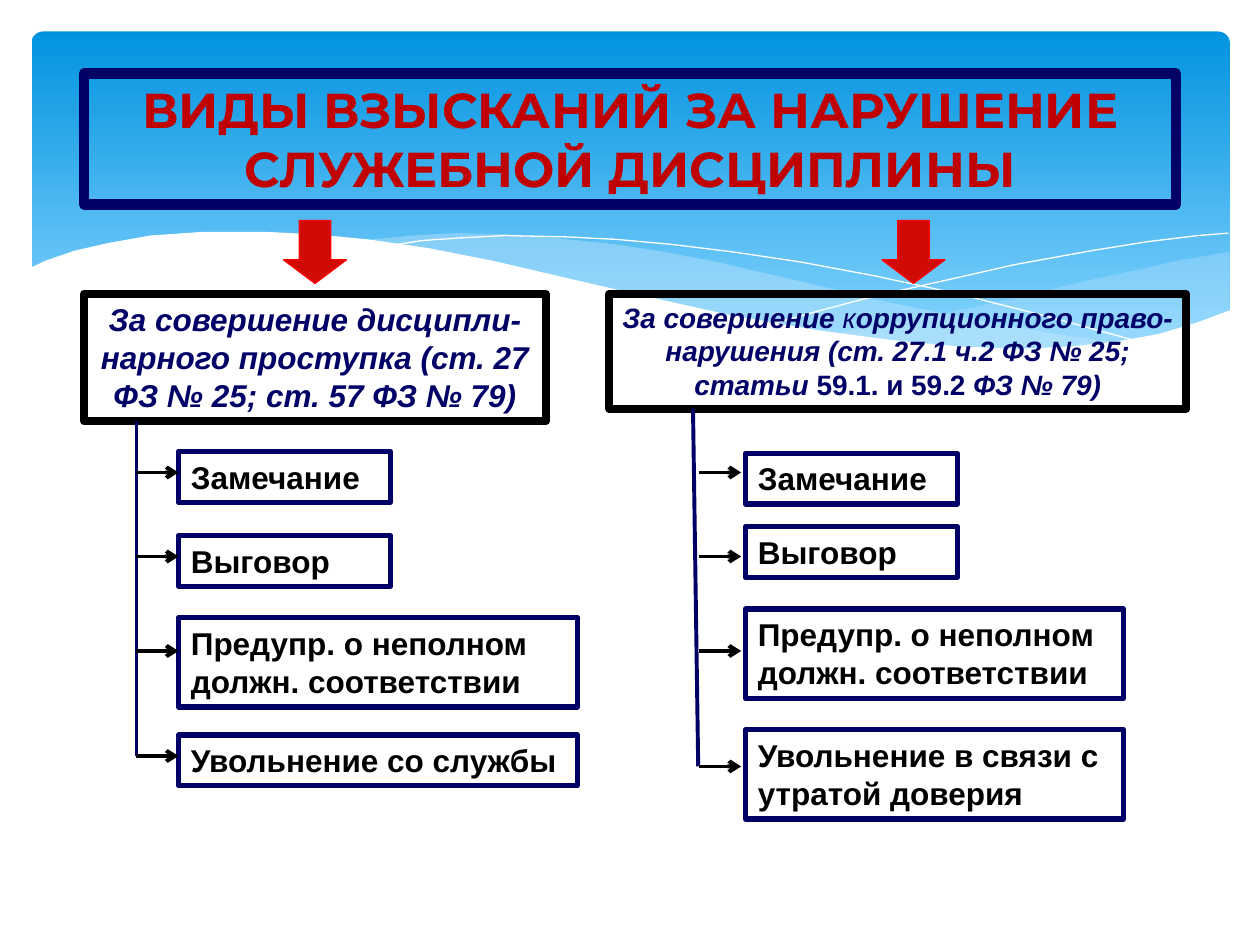
from dataclasses import dataclass

from lxml.etree import SubElement
from pptx import Presentation
from pptx.dml.color import RGBColor
from pptx.enum.shapes import MSO_CONNECTOR, MSO_SHAPE
from pptx.enum.text import MSO_AUTO_SIZE, PP_ALIGN
from pptx.oxml.ns import qn
from pptx.util import Pt


@dataclass(frozen=True)
class Theme:
    """Colours, fonts and type sizes of the slide."""
    navy: str = "000066"
    black: str = "000000"
    white: str = "FFFFFF"
    title: str = "C00000"
    arrow: str = "D00B06"
    arrow_edge: str = "FF0000"
    sky_top: str = "0293E0"
    sky_bottom: str = "83D3FE"
    haze: str = "C6E7FC"
    title_font: str = "Montserrat"
    body_font: str = "Arial"
    title_size: int = 28
    body_size: int = 18
    small_size: int = 16


THEME = Theme()

RIGHT_HAZE = [
    (702, 144), (673, 149), (642, 156), (620, 160.6), (580, 170.6), (542, 178.6),
    (508, 185), (476, 190.8), (508, 194.4), (536, 198), (562, 199.4), (586, 200),
    (615, 198.7), (640, 196), (663, 190.8), (683, 185), (702.7, 177.8), (702.7, 144),
]
MIDDLE_HAZE = [
    (643, 196.6), (603, 190.8), (558, 182.9), (508, 172.8), (453, 159.8), (410, 149.8),
    (380, 144), (352, 139.7), (318, 136.1), (287, 133.9), (260, 133.2), (236, 134.6),
    (206, 137.5), (246, 143.3), (291, 151.9), (323, 159.8), (382, 172.8), (433, 183.6),
    (479, 191.5), (519, 196), (557, 199.4), (589, 200.2), (617, 199.4), (643, 196.6),
]
FALLING_LINE = [
    (222.5, 140.4), (241, 137.5), (261, 136.1), (288.7, 134.6), (324, 135.4), (352, 136.8),
    (384, 139.7), (419, 144), (458, 149.8), (500, 157.7), (547, 167.8), (598, 180.7),
    (653, 195.8),
]
RISING_LINE = [
    (441.4, 185), (470, 177.1), (500, 169.2), (538.6, 160.6), (580, 151.2), (623.5, 143.3),
    (655, 138.2), (684.7, 134.6), (702, 133.2),
]
WHITE_WAVE = [
    (703.4, 177.1), (684, 184.3), (662.4, 190.8), (638.6, 195.1), (612, 198), (582.5, 199.4),
    (547.9, 198), (509.8, 194.4), (466.6, 188.6), (416.9, 180), (362.2, 167.8), (321.8, 158.4),
    (281.5, 149), (244.8, 141.8), (210.2, 136.8), (180, 133.9), (151.9, 132.5), (115.9, 132.5),
    (85.7, 134.6), (61.2, 139), (42.5, 143.3), (25.9, 149), (16.6, 153.4), (16.6, 236.9),
    (703.4, 236.9),
]


def color(value):
    """Turn a hex string into a colour."""
    return RGBColor.from_string(value)


def points(*lengths):
    """Turn lengths in points into slide units."""
    return [Pt(length) for length in lengths]


def write_text(frame, text, font=THEME.body_font, size=THEME.body_size, ink=THEME.black,
               bold=True, italic=False, align=PP_ALIGN.LEFT):
    """Add a run of formatted text to the first paragraph of a frame."""
    paragraph = frame.paragraphs[0]
    paragraph.alignment = align
    run = paragraph.add_run()
    run.text = text
    run.font.name = font
    run.font.size = Pt(size)
    run.font.bold = bold
    run.font.italic = italic
    run.font.color.rgb = color(ink)


def add_frame(slide, box, edge, weight):
    """Add an outlined text box and return its text frame."""
    shape = slide.shapes.add_textbox(*points(*box))
    shape.line.color.rgb = color(edge)
    shape.line.width = Pt(weight)
    frame = shape.text_frame
    frame.word_wrap = True
    frame.auto_size = MSO_AUTO_SIZE.SHAPE_TO_FIT_TEXT
    return frame


def add_line(slide, start, end, ink, arrow=False):
    """Add a straight line, with an arrowhead at its end if asked."""
    connector = slide.shapes.add_connector(MSO_CONNECTOR.STRAIGHT, *points(*start, *end))
    connector.line.color.rgb = color(ink)
    connector.line.width = Pt(2.25)
    properties = connector._element.spPr
    if arrow:
        SubElement(properties.find(qn("a:ln")), qn("a:tailEnd"), type="arrow")
    SubElement(properties, qn("a:effectLst"))


def add_curve(slide, vertices, fill=None, opacity=100):
    """Add a filled wave, or a white hairline when no fill is given."""
    first, *rest = [points(*vertex) for vertex in vertices]
    builder = slide.shapes.build_freeform(*first)
    builder.add_line_segments(rest, close=fill is not None)
    shape = builder.convert_to_shape()
    shape.shadow.inherit = False
    if fill is None:
        shape.fill.background()
        shape.line.color.rgb = color(THEME.white)
        shape.line.width = Pt(0)
        return
    shape.line.fill.background()
    shape.fill.solid()
    shape.fill.fore_color.rgb = color(fill)
    if opacity < 100:
        solid = shape._element.spPr.find(qn("a:solidFill"))
        SubElement(solid[0], qn("a:alpha"), val=str(opacity * 1000))


def add_backdrop(slide, box):
    """Draw the blue panel with its waves."""
    panel = slide.shapes.add_shape(MSO_SHAPE.ROUNDED_RECTANGLE, *points(*box))
    panel.adjustments[0] = 0.034
    panel.shadow.inherit = False
    panel.line.fill.background()
    panel.fill.gradient()
    panel.fill.gradient_angle = 270
    stops = ((0, THEME.sky_top), (0.9, THEME.sky_bottom))
    for stop, (position, value) in zip(panel.fill.gradient_stops, stops):
        stop.position = position
        stop.color.rgb = color(value)
    add_curve(slide, RIGHT_HAZE, THEME.haze, 29)
    add_curve(slide, MIDDLE_HAZE, THEME.haze, 40)
    add_curve(slide, FALLING_LINE)
    add_curve(slide, RISING_LINE)
    add_curve(slide, WHITE_WAVE, THEME.white)


def add_title(slide, box):
    """Place the framed title."""
    write_text(add_frame(slide, box, THEME.navy, 6),
               "ВИДЫ ВЗЫСКАНИЙ ЗА НАРУШЕНИЕ СЛУЖЕБНОЙ ДИСЦИПЛИНЫ",
               font=THEME.title_font, size=THEME.title_size, ink=THEME.title,
               align=PP_ALIGN.CENTER)


def add_down_arrow(slide, box):
    """Place a red arrow pointing down to a column."""
    arrow = slide.shapes.add_shape(MSO_SHAPE.DOWN_ARROW, *points(*box))
    arrow.adjustments[1] = 0.375
    arrow.shadow.inherit = False
    arrow.fill.solid()
    arrow.fill.fore_color.rgb = color(THEME.arrow)
    arrow.line.color.rgb = color(THEME.arrow_edge)
    arrow.line.width = Pt(0.75)


def add_column(slide, box, size, heading, penalties, trunk_end, branch_left, arrow_rows):
    """Place a heading, its penalties below it and the tree that joins them."""
    left, top, width, height = box
    frame = add_frame(slide, box, THEME.black, 4.5)
    for text, changes in heading:
        write_text(frame, text, **{"size": size, "ink": THEME.navy, "italic": True,
                                   "align": PP_ALIGN.CENTER, **changes})
    for text, offset, penalty_top, penalty_width, penalty_height in penalties:
        penalty_box = (left + offset, penalty_top, penalty_width, penalty_height)
        write_text(add_frame(slide, penalty_box, THEME.navy, 3), text)
    add_line(slide, (trunk_end[0], top + height), (trunk_end[1], arrow_rows[-1]), THEME.navy)
    for row in arrow_rows:
        add_line(slide, (branch_left, row), (branch_left + 24, row), THEME.black, arrow=True)


def build_slide(presentation):
    """Build the slide of penalties for breaches of service discipline."""
    slide = presentation.slides.add_slide(presentation.slide_layouts[6])
    add_backdrop(slide, (18, 18, 684.7, 194.4))
    add_title(slide, (48, 42, 624, 74.9))
    add_column(
        slide, (48, 168, 264, 72.7), THEME.body_size,
        [("За совершение дисципли-нарного проступка (ст. 27 ФЗ № 25; ст. 57 ФЗ № 79)", {})],
        [("Замечание", 54, 258, 121, 29), ("Выговор", 54, 306, 121, 29),
         ("Предупр. о неполном должн. соответствии", 54, 353, 228, 51),
         ("Увольнение со службы", 54, 420, 228, 29)],
        (78, 78), 78, (270, 318, 372, 432))
    add_column(
        slide, (348, 168, 330, 65.5), THEME.small_size,
        [("За совершение", {}), (" к", {"bold": False}),
         ("оррупционного право-нарушения (ст. 27.1 ч.2 ФЗ № 25; статьи ", {}),
         ("59.1. и 59.2 ", {"italic": False}), ("ФЗ № 79)", {})],
        [("Замечание", 78, 259, 121, 29), ("Выговор", 78, 301, 121, 29),
         ("Предупр. о неполном должн. соответствии", 78, 348, 216, 51),
         ("Увольнение в связи с утратой доверия", 78, 417, 216, 51)],
        (396, 399), 399.5, (270, 318, 372, 438))
    for arrow_left in (162, 504):
        add_down_arrow(slide, (arrow_left, 126, 36, 36))


def main():
    """Create and save the presentation."""
    presentation = Presentation()
    presentation.slide_width, presentation.slide_height = points(720, 540)
    build_slide(presentation)
    presentation.save("out.pptx")


if __name__ == "__main__":
    main()
